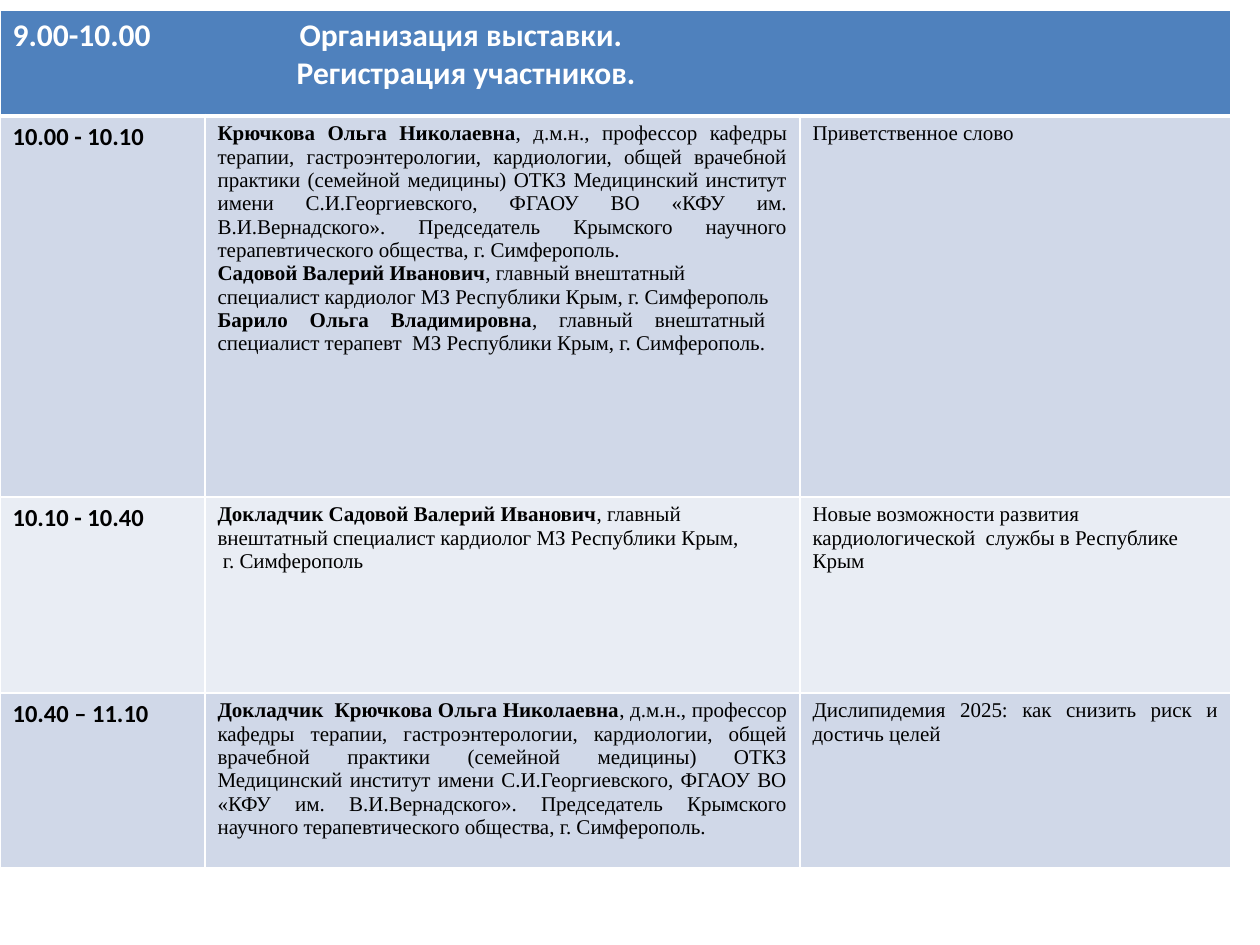
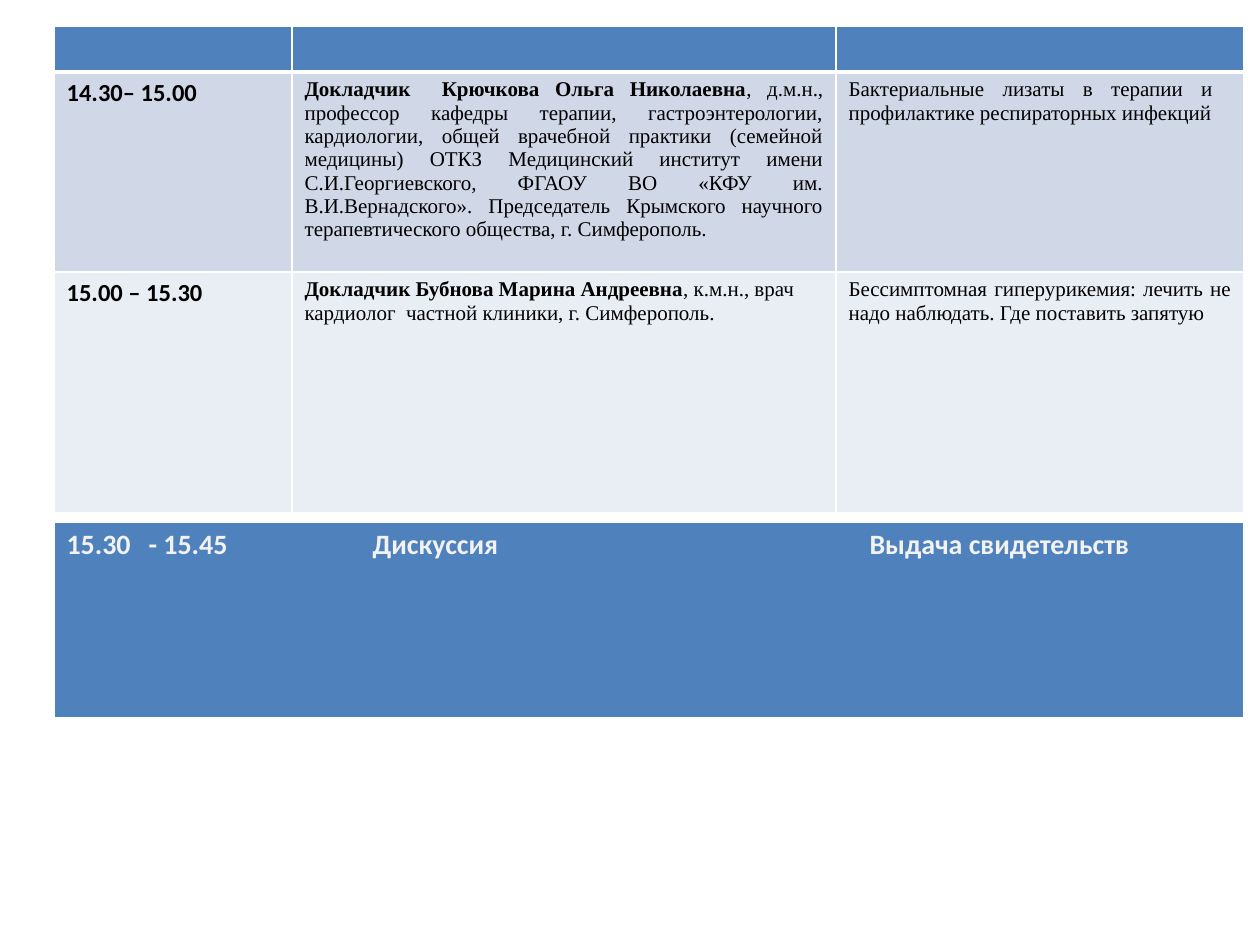
from dataclasses import dataclass

from lxml import etree
from pptx import Presentation
from pptx.dml.color import RGBColor
from pptx.enum.text import PP_ALIGN
from pptx.oxml.ns import qn
from pptx.util import Pt

LEFT = PP_ALIGN.LEFT
JUSTIFY = PP_ALIGN.JUSTIFY
EMU_PER_PX = 914400 / 126
SLIDE_WIDTH, SLIDE_HEIGHT = 1260, 945
THIN, THICK = 1, 3
COLORS = {
    "band": "4F81BD",
    "odd": "D0D8E8",
    "even": "E9EDF4",
    "white": "FFFFFF",
    "pale": "F2F2F2",
    "text": "000000",
}
PROFESSOR = (
    ", д.м.н., профессор кафедры терапии, гастроэнтерологии, кардиологии, "
    "общей врачебной практики (семейной медицины) ОТКЗ Медицинский институт "
    "имени С.И.Георгиевского, ФГАОУ ВО «КФУ им. В.И.Вернадского». Председатель "
    "Крымского научного терапевтического общества, г. Симферополь."
)


@dataclass(frozen=True)
class Style:
    font: str
    size: int
    color: str


@dataclass(frozen=True)
class Line:
    bold: str = ""
    plain: str = ""
    align: PP_ALIGN = LEFT
    indent: int = 0
    tabs: tuple[int, ...] = ()


@dataclass(frozen=True)
class Entry:
    lines: tuple[Line, ...]
    style: Style


@dataclass(frozen=True)
class Row:
    height: int
    fill: str
    entries: tuple[Entry, ...] = ()
    top: int = THIN
    bottom: int = THIN


@dataclass(frozen=True)
class Schedule:
    left: int
    top: int
    columns: tuple[int, ...]
    rows: tuple[Row, ...]
    merge_first: bool = False


TIME = Style("Calibri", 14, "text")
BODY = Style("Times New Roman", 12, "text")
OPENING = Style("Calibri", 18, "white")
CLOSING = Style("Calibri", 16, "pale")


def session(height: int, fill: str, time: str, speakers: tuple[Line, ...],
            topic: Line, top: int = THIN) -> Row:
    entries = (Entry((Line(time),), TIME), Entry(speakers, BODY), Entry((topic,), BODY))
    return Row(height, fill, entries, top)


MORNING = Schedule(
    0, 10, (205, 595, 431),
    (
        Row(106, "band", (Entry((
            Line("9.00-10.00\tОрганизация выставки.", tabs=(287,)),
            Line("Регистрация участников.", indent=284),
        ), OPENING),), bottom=THICK),
        session(381, "odd", "10.00 - 10.10", (
            Line("Крючкова Ольга Николаевна", PROFESSOR, JUSTIFY),
            Line("Садовой Валерий Иванович",
                 ", главный внештатный специалист кардиолог МЗ Республики Крым, г. Симферополь"),
            Line("Барило Ольга Владимировна",
                 ", главный внештатный  специалист терапевт  МЗ Республики Крым, г. Симферополь.",
                 JUSTIFY),
        ), Line(plain="Приветственное слово", align=JUSTIFY), THICK),
        session(196, "even", "10.10 - 10.40", (
            Line("Докладчик Садовой Валерий Иванович",
                 ", главный внештатный специалист кардиолог МЗ Республики Крым,"),
            Line(plain=" г. Симферополь"),
        ), Line(plain="Новые возможности развития  кардиологической  службы в Республике Крым")),
        session(175, "odd", "10.40 – 11.10", (
            Line("Докладчик  Крючкова Ольга Николаевна", PROFESSOR, JUSTIFY),
        ), Line(plain="Дислипидемия 2025: как снизить риск и достичь целей", align=JUSTIFY)),
    ),
    merge_first=True,
)

AFTERNOON = Schedule(
    54, 26, (238, 544, 408),
    (
        Row(46, "band", bottom=THICK),
        session(200, "odd", "14.30– 15.00", (
            Line("Докладчик  Крючкова Ольга Николаевна", PROFESSOR, JUSTIFY),
        ), Line(plain="Бактериальные лизаты в терапии и  профилактике респираторных инфекций",
                align=JUSTIFY), THICK),
        session(241, "even", "15.00 – 15.30", (
            Line("Докладчик Бубнова Марина Андреевна",
                 ", к.м.н., врач кардиолог  частной клиники, г. Симферополь."),
        ), Line(plain="Бессимптомная гиперурикемия: лечить не надо наблюдать. Где поставить запятую",
                align=JUSTIFY)),
    ),
)

DISCUSSION = Schedule(
    54, 522, (1190,),
    (
        Row(197, "band", (Entry((
            Line("15.30\t- 15.45\tДискуссия\tВыдача свидетельств", tabs=(82, 306, 803)),
        ), CLOSING),), bottom=THICK),
    ),
)


def px(length: int) -> int:
    return round(length * EMU_PER_PX)


def set_borders(cell, row: Row) -> None:
    properties = cell._tc.get_or_add_tcPr()
    widths = {"a:lnL": THIN, "a:lnR": THIN, "a:lnT": row.top, "a:lnB": row.bottom}
    for tag, width in widths.items():
        border = etree.SubElement(properties, qn(tag), w=str(Pt(width)))
        solid = etree.SubElement(border, qn("a:solidFill"))
        etree.SubElement(solid, qn("a:srgbClr"), val=COLORS["white"])


def write_line(paragraph, line: Line, style: Style) -> None:
    paragraph.alignment = line.align
    properties = paragraph._p.get_or_add_pPr()
    if line.indent:
        properties.set("marL", str(px(line.indent)))
    if line.tabs:
        tab_list = etree.SubElement(properties, qn("a:tabLst"))
        for position in line.tabs:
            etree.SubElement(tab_list, qn("a:tab"), pos=str(px(position)), algn="l")
    for text, bold in ((line.bold, True), (line.plain, False)):
        if text:
            run = paragraph.add_run()
            run.text = text
            run.font.name = style.font
            run.font.size = Pt(style.size)
            run.font.bold = bold
            run.font.color.rgb = RGBColor.from_string(COLORS[style.color])


def write_entry(cell, entry: Entry) -> None:
    text_frame = cell.text_frame
    for index, line in enumerate(entry.lines):
        paragraph = text_frame.add_paragraph() if index else text_frame.paragraphs[0]
        write_line(paragraph, line, entry.style)


def draw_schedule(slide, schedule: Schedule) -> None:
    frame = slide.shapes.add_table(
        len(schedule.rows), len(schedule.columns), px(schedule.left), px(schedule.top),
        px(sum(schedule.columns)), px(sum(row.height for row in schedule.rows)))
    table = frame.table
    table.first_row = False
    table.horz_banding = False
    for column, width in zip(table.columns, schedule.columns):
        column.width = px(width)
    for table_row, row in zip(table.rows, schedule.rows):
        table_row.height = px(row.height)
        for cell in table_row.cells:
            set_borders(cell, row)
            cell.fill.solid()
            cell.fill.fore_color.rgb = RGBColor.from_string(COLORS[row.fill])
            if not row.entries:
                cell.margin_top = cell.margin_bottom = 0
        for cell, entry in zip(table_row.cells, row.entries):
            write_entry(cell, entry)
    if schedule.merge_first:
        table.cell(0, 0).merge(table.cell(0, len(schedule.columns) - 1))


def main() -> None:
    presentation = Presentation()
    presentation.slide_width = px(SLIDE_WIDTH)
    presentation.slide_height = px(SLIDE_HEIGHT)
    blank_layout = presentation.slide_layouts[6]
    for schedules in ((MORNING,), (AFTERNOON, DISCUSSION)):
        slide = presentation.slides.add_slide(blank_layout)
        for schedule in schedules:
            draw_schedule(slide, schedule)
    presentation.save("out.pptx")


if __name__ == "__main__":
    main()
